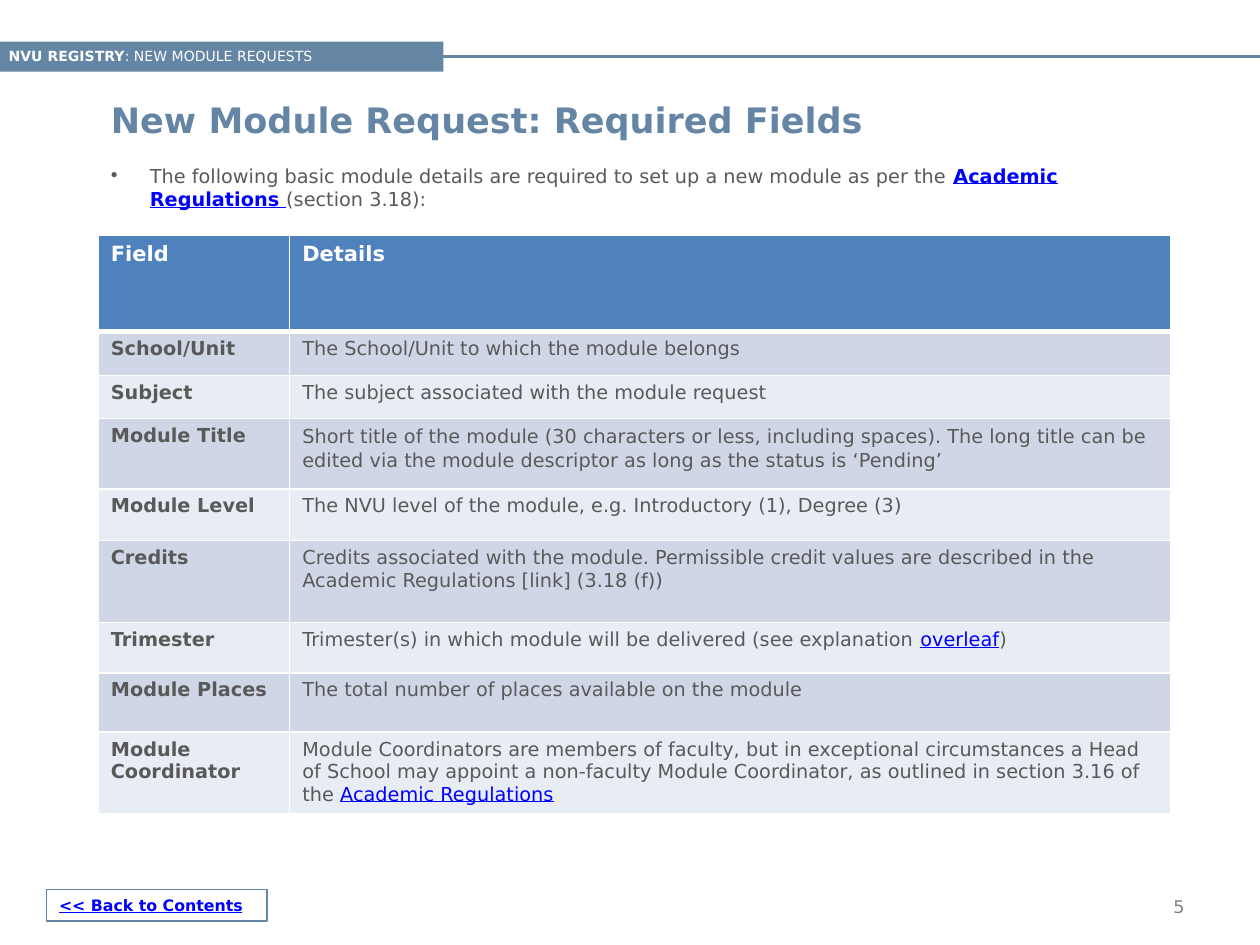
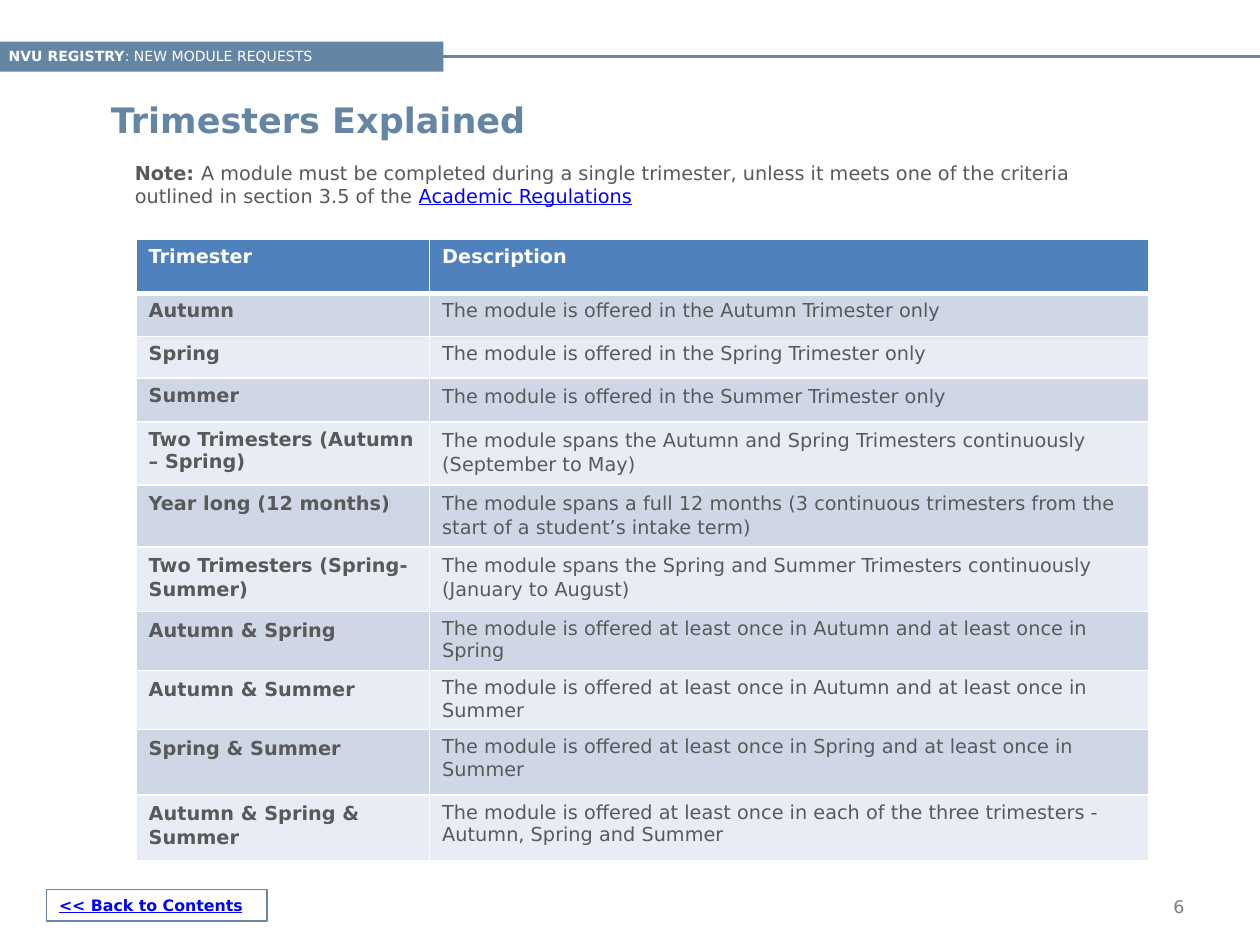
from dataclasses import dataclass

from pptx import Presentation
from pptx import util as u
from pptx.dml.color import RGBColor
from pptx.enum import shapes, text
from pptx.oxml.ns import qn
from lxml import etree


@dataclass(frozen=True)
class Theme:
    font: str = "DejaVu Sans"
    brand: str = "6585A5"
    body: str = "595959"
    link: str = "0000FF"
    white: str = "FFFFFF"
    number: str = "7F7F7F"
    header_fill: str = "4F81BD"
    row_fills: tuple = ("CFD7E7", "E8ECF4")
    title_size: float = 20
    table_head_size: float = 12
    body_size: float = 11
    number_size: float = 10
    button_size: float = 9
    band_size: float = 8


@dataclass(frozen=True)
class Run:
    text: str
    bold: bool = False
    link: bool = False


def color(value):
    return RGBColor.from_string(value)


def box(left, top, width, height):
    return tuple(u.Inches(length) for length in (left, top, width, height))


class Deck:
    def __init__(self, theme):
        self.theme = theme
        self.presentation = Presentation()
        self.presentation.slide_width = u.Inches(10)
        self.presentation.slide_height = u.Inches(7.5)
        self.slide = None

    def add_slide(self, title, number):
        layout = self.presentation.slide_layouts[1]
        self.slide = self.presentation.slides.add_slide(layout)
        self.band()
        self.title(title)
        self.page_number(number)
        self.back_button()

    def add_text(self, frame, runs, size, ink, line_spacing=None, align=text.PP_ALIGN.LEFT):
        frame.word_wrap = True
        paragraph = frame.paragraphs[0]
        paragraph.alignment = align
        paragraph.space_before = u.Pt(0)
        if line_spacing:
            paragraph.line_spacing = line_spacing
        for item in runs:
            run = paragraph.add_run()
            run.text = item.text
            font = run.font
            font.name = self.theme.font
            font.size = u.Pt(size)
            font.bold = item.bold
            font.underline = item.link
            font.color.rgb = color(self.theme.link if item.link else ink)
        return paragraph

    def place(self, shape, position):
        shape.left, shape.top, shape.width, shape.height = position
        shape.text_frame.auto_size = text.MSO_AUTO_SIZE.NONE
        shape.text_frame.vertical_anchor = text.MSO_ANCHOR.TOP

    def rectangle(self, position, runs, size, ink, fill=None, line=None):
        shape = self.slide.shapes.add_shape(shapes.MSO_SHAPE.RECTANGLE, *position)
        shape.shadow.inherit = False
        if fill:
            shape.fill.solid()
            shape.fill.fore_color.rgb = color(fill)
        else:
            shape.fill.background()
        if line:
            shape.line.color.rgb = color(line)
            shape.line.width = u.Pt(0.75)
        else:
            shape.line.fill.background()
        shape.text_frame.vertical_anchor = text.MSO_ANCHOR.TOP
        self.add_text(shape.text_frame, runs, size, ink)

    def band(self):
        theme = self.theme
        rule = self.slide.shapes.add_connector(
            shapes.MSO_CONNECTOR.STRAIGHT, *box(3.52, 0.45, 10.04, 0.45))
        rule.line.color.rgb = color(theme.brand)
        rule.line.width = u.Pt(2)
        etree.SubElement(rule._element.spPr, qn("a:effectLst"))
        runs = [Run("NVU REGISTRY", bold=True), Run(": NEW MODULE REQUESTS")]
        self.rectangle(box(-0.03, 0.33, 3.55, 0.24), runs, theme.band_size,
                       theme.white, fill=theme.brand)

    def title(self, words):
        shape = self.slide.shapes.title
        self.place(shape, box(0.78, 0.73, 8.9, 0.44))
        self.add_text(shape.text_frame, [Run(words, bold=True)],
                      self.theme.title_size, self.theme.brand)

    def page_number(self, number):
        shape = self.slide.shapes.add_textbox(*box(8.83, 7.06, 0.67, 0.27))
        self.add_text(shape.text_frame, [Run(str(number))], self.theme.number_size,
                      self.theme.number, align=text.PP_ALIGN.RIGHT)

    def back_button(self):
        runs = [Run("<< Back to Contents", bold=True, link=True)]
        self.rectangle(box(0.37, 7.06, 1.75, 0.25), runs, self.theme.button_size,
                       self.theme.link, line=self.theme.brand)

    def intro(self, position, runs, bullet=None):
        shape = self.slide.placeholders[1]
        self.place(shape, position)
        paragraph = self.add_text(shape.text_frame, runs, self.theme.body_size, self.theme.body)
        properties = paragraph._p.get_or_add_pPr()
        indent = u.Inches(0.31) if bullet else 0
        properties.set("marL", str(indent))
        properties.set("indent", str(-indent))
        if bullet:
            ink = etree.SubElement(properties, qn("a:buClr"))
            etree.SubElement(ink, qn("a:srgbClr"), val=self.theme.body)
            etree.SubElement(properties, qn("a:buChar"), char=bullet)
        else:
            etree.SubElement(properties, qn("a:buNone"))

    def borders(self, cell, top, bottom):
        properties = cell._tc.get_or_add_tcPr()
        for side, points in (("lnL", 1), ("lnR", 1), ("lnT", top), ("lnB", bottom)):
            line = etree.SubElement(properties, qn(f"a:{side}"), w=str(u.Pt(points)))
            fill = etree.SubElement(line, qn("a:solidFill"))
            etree.SubElement(fill, qn("a:srgbClr"), val=self.theme.white)

    def table(self, left, top, widths, heights, rows, head_size, loose):
        theme = self.theme
        position = box(left, top, sum(widths), sum(heights))
        table = self.slide.shapes.add_table(len(rows), len(widths), *position).table
        for column, width in zip(table.columns, widths):
            column.width = u.Inches(width)
        for row, height in zip(table.rows, heights):
            row.height = u.Inches(height)
        for row_index, row in enumerate(rows):
            head = row_index == 0
            fill = theme.header_fill if head else theme.row_fills[(row_index - 1) % 2]
            for column_index, content in enumerate(row):
                cell = table.cell(row_index, column_index)
                self.borders(cell, 3 if row_index == 1 else 1, 3 if head else 1)
                cell.fill.solid()
                cell.fill.fore_color.rgb = color(fill)
                if isinstance(content, str):
                    content = [Run(content, bold=head or column_index == 0)]
                self.add_text(cell.text_frame, content,
                              head_size if head else theme.body_size,
                              theme.white if head else theme.body,
                              1.07 if (row_index, column_index) in loose else None)


FIELDS = [
    ("Field", "Details"),
    ("School/Unit", "The School/Unit to which the module belongs"),
    ("Subject", "The subject associated with the module request"),
    ("Module Title", "Short title of the module (30 characters or less, including spaces). "
     "The long title can be edited via the module descriptor as long as the status is ‘Pending’"),
    ("Module Level", "The NVU level of the module, e.g. Introductory (1), Degree (3)"),
    ("Credits", "Credits associated with the module. Permissible credit values are described "
     "in the Academic Regulations [link] (3.18 (f))"),
    ("Trimester", [Run("Trimester(s) in which module will be delivered (see explanation "),
                   Run("overleaf", link=True), Run(")")]),
    ("Module Places", "The total number of places available on the module"),
    ("Module Coordinator", [
        Run("Module Coordinators are members of faculty, but in exceptional circumstances a "
            "Head of School may appoint a non-faculty Module Coordinator, as outlined in "
            "section 3.16 of the "),
        Run("Academic Regulations", link=True)]),
]

OFFERED = "The module is offered "
SPANS = "The module spans "
TRIMESTERS = [
    ("Trimester", "Description"),
    *((season, f"{OFFERED}in the {season} Trimester only")
      for season in ("Autumn", "Spring", "Summer")),
    ("Two Trimesters (Autumn – Spring)",
     SPANS + "the Autumn and Spring Trimesters continuously (September to May)"),
    ("Year long (12 months)",
     SPANS + "a full 12 months (3 continuous trimesters from the start of a student’s intake term)"),
    ("Two Trimesters (Spring-Summer)",
     SPANS + "the Spring and Summer Trimesters continuously (January to August)"),
    *((f"{first} & {second}", f"{OFFERED}at least once in {first} and at least once in {second}")
      for first, second in (("Autumn", "Spring"), ("Autumn", "Summer"), ("Spring", "Summer"))),
    ("Autumn & Spring & Summer",
     OFFERED + "at least once in each of the three trimesters - Autumn, Spring and Summer"),
]


def main():
    theme = Theme()
    deck = Deck(theme)

    deck.add_slide("New Module Request: Required Fields", 5)
    deck.table(0.78, 1.87, [1.52, 6.99],
               [0.76, 0.35, 0.34, 0.56, 0.41, 0.65, 0.4, 0.47, 0.65],
               FIELDS, theme.table_head_size, {(3, 1)})
    deck.intro(box(0.78, 1.25, 8.72, 0.47), [
        Run("The following basic module details are required to set up a new module as per the "),
        Run("Academic Regulations ", bold=True, link=True),
        Run("(section 3.18):")], bullet="•")

    deck.add_slide("Trimesters Explained", 6)
    loose_names = {(row, 0) for row in range(5, 11)}
    loose_details = {(row, 1) for row in range(3, 7)}
    deck.table(1.08, 1.9, [2.33, 5.71],
               [0.43, 0.34, 0.33, 0.35, 0.5, 0.49, 0.51, 0.47, 0.47, 0.52, 0.52],
               TRIMESTERS, theme.body_size, loose_names | loose_details)
    deck.intro(box(0.97, 1.23, 8.15, 0.47), [
        Run("Note: ", bold=True),
        Run("A module must be completed during a single trimester, unless it meets one of "
            "the criteria outlined in section 3.5 of the "),
        Run("Academic Regulations", link=True)])

    deck.presentation.save("out.pptx")


if __name__ == "__main__":
    main()
